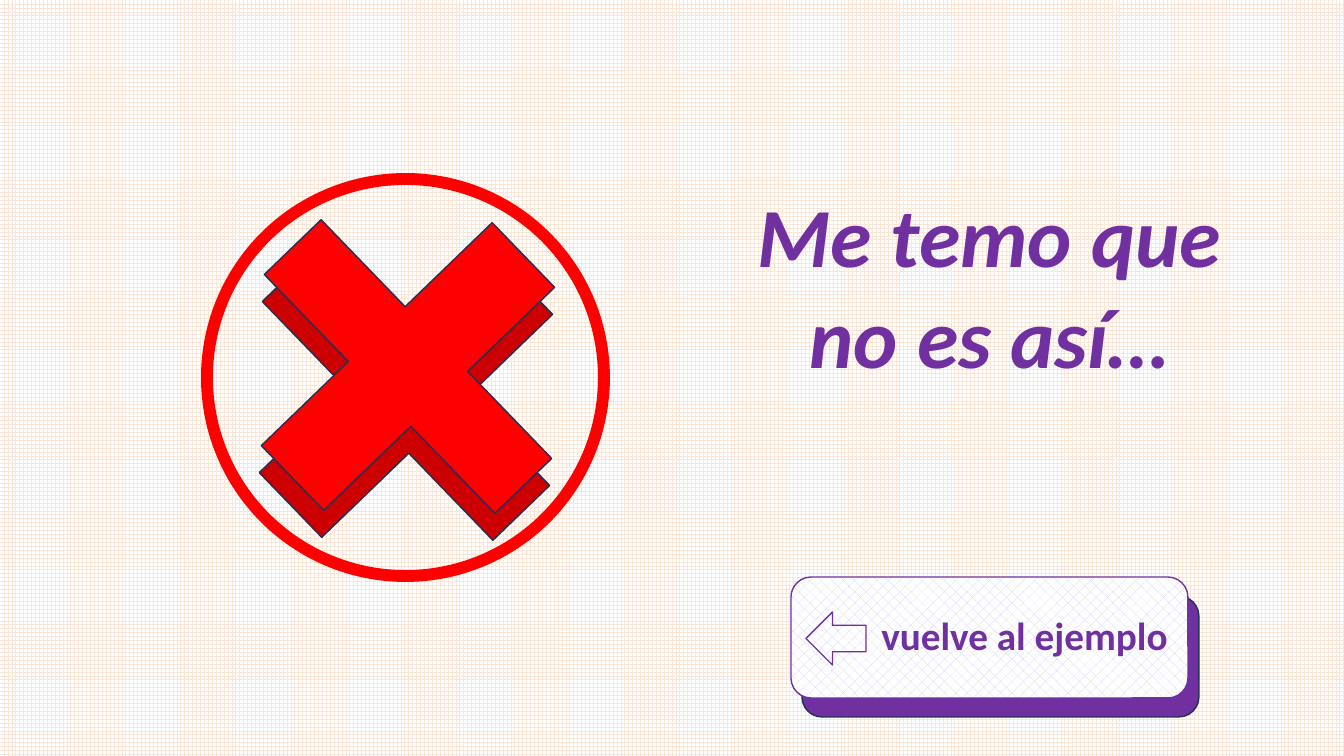
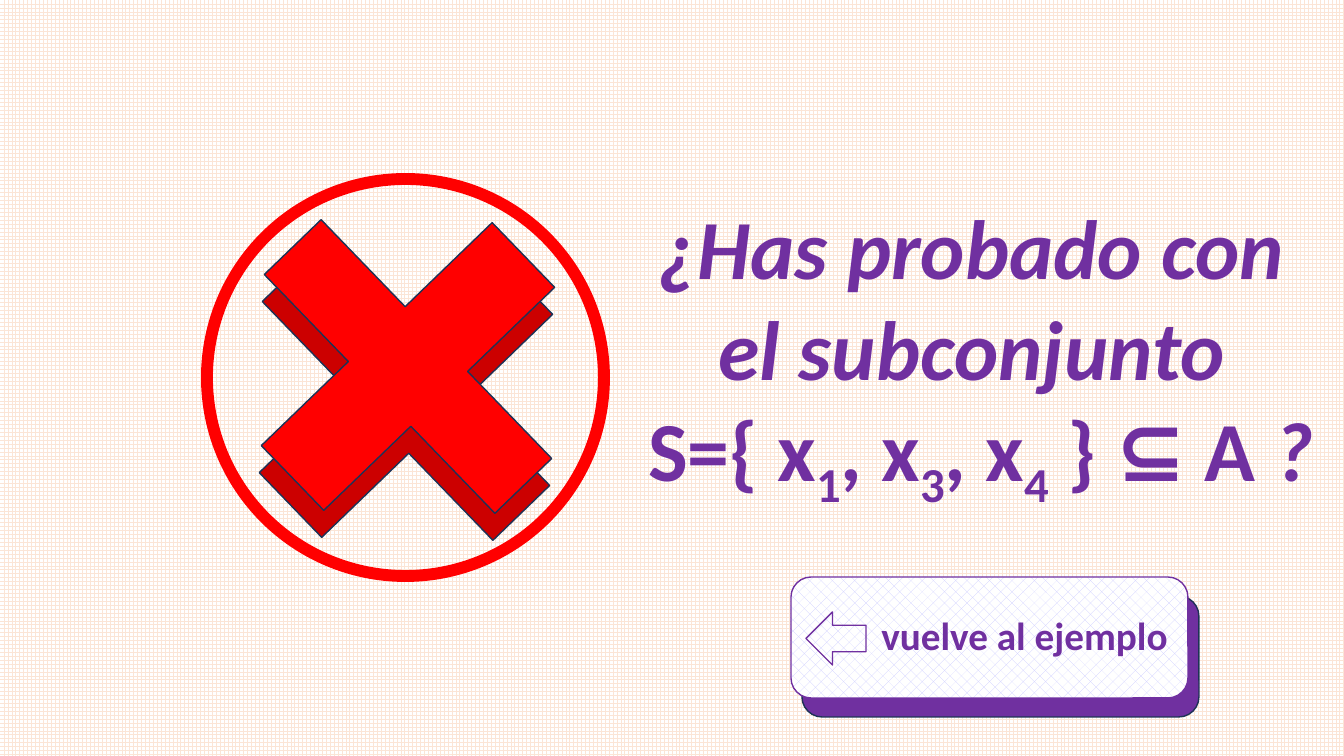
from lxml import etree
from pptx import Presentation
from pptx.dml.color import RGBColor
from pptx.enum.dml import MSO_PATTERN
from pptx.enum.shapes import MSO_SHAPE
from pptx.enum.text import MSO_ANCHOR, PP_ALIGN
from pptx.oxml.ns import qn
from pptx.util import Pt

SLIDE_WIDTH, SLIDE_HEIGHT = 1344, 756
EMU_PER_PX = 12192000 / SLIDE_WIDTH

PURPLE = RGBColor(0x70, 0x30, 0xA0)
RED = RGBColor(0xFF, 0x00, 0x00)
DARK_RED = RGBColor(0xCC, 0x00, 0x00)
NAVY = RGBColor(0x1E, 0x32, 0x56)
LAVENDER = RGBColor(0xCC, 0xCC, 0xFF)
PEACH = RGBColor(0xFB, 0xE5, 0xD6)
WHITE = RGBColor(0xFF, 0xFF, 0xFF)

FONT_NAME = "Calibri"
CENTER = PP_ALIGN.CENTER
MIDDLE = MSO_ANCHOR.MIDDLE
LARGE_GRID = MSO_PATTERN.LARGE_GRID
PERCENT_25 = MSO_PATTERN.PERCENT_25
CIRCLE = MSO_SHAPE.FLOWCHART_CONNECTOR
CROSS = MSO_SHAPE.CROSS
ROUNDED = MSO_SHAPE.ROUNDED_RECTANGLE
LEFT_ARROW = MSO_SHAPE.LEFT_ARROW

ITALIC, UPRIGHT, SUBSCRIPT = "italic", "upright", "subscript"
MARK_BOX = (207, 179, 397, 397)
BUTTON_BOX = (791, 577, 397, 121)
MESSAGES = [
    {
        "box": (679, 179, 620, 315),
        "wrap": True,
        "lines": [[(" Me temo que ", ITALIC)], [("no es así…", ITALIC)]],
    },
    {
        "box": (628, 191, 706, 315),
        "wrap": False,
        "lines": [
            [("¿Has probado con ", ITALIC)],
            [("el subconjunto ", ITALIC)],
            [
                ("S={ x", UPRIGHT), ("1", SUBSCRIPT),
                (", x", UPRIGHT), ("3", SUBSCRIPT),
                (", x", UPRIGHT), ("4", SUBSCRIPT),
                (" } ⊆ A ", UPRIGHT), ("?", ITALIC),
            ],
        ],
    },
]


def px(length):
    """Turn pixels into EMU."""
    return round(length * EMU_PER_PX)


def apply_pattern(fill, pattern, foreground, background):
    """Give a fill a two-colour pattern."""
    fill.patterned()
    fill.pattern = pattern
    fill.fore_color.rgb = foreground
    fill.back_color.rgb = background


def add_outlined_shape(slide, preset, box, line_color, line_width=1, fill_color=None):
    """Add a preset shape with a line and an optional solid fill."""
    shape = slide.shapes.add_shape(preset, *map(px, box))
    shape.shadow.inherit = False
    shape.line.color.rgb = line_color
    shape.line.width = Pt(line_width)
    if fill_color is None:
        shape.fill.background()
    else:
        shape.fill.solid()
        shape.fill.fore_color.rgb = fill_color
    return shape


def style_paragraph(paragraph, size):
    """Centre a paragraph and set its bold purple font."""
    paragraph.alignment = CENTER
    font = paragraph.font
    font.name = FONT_NAME
    font.size = Pt(size)
    font.bold = True
    font.color.rgb = PURPLE


def outline_run(run):
    """Draw a thin purple line around the letters of a run."""
    line = etree.Element(qn("a:ln"), w=str(Pt(1)))
    solid_fill = etree.SubElement(line, qn("a:solidFill"))
    etree.SubElement(solid_fill, qn("a:srgbClr"), val=str(PURPLE))
    run._r.get_or_add_rPr().insert(0, line)


def add_message(slide, box, wrap, lines):
    """Write the large message, one paragraph a line."""
    text_frame = slide.shapes.add_textbox(*map(px, box)).text_frame
    text_frame.word_wrap = wrap
    for index, pieces in enumerate(lines):
        paragraph = text_frame.add_paragraph() if index else text_frame.paragraphs[0]
        style_paragraph(paragraph, 60)
        for text, kind in pieces:
            run = paragraph.add_run()
            run.text = text
            if kind == ITALIC:
                run.font.italic = True
                outline_run(run)
            elif kind == SUBSCRIPT:
                run._r.get_or_add_rPr().set("baseline", "-25000")


def add_wrong_mark(slide, box):
    """Draw a ringed red cross with a darker cross behind it."""
    left, top, _, _ = box
    add_outlined_shape(slide, CIRCLE, box, RED, 8.5)
    for offset_x, offset_y, color in ((33, 54, DARK_RED), (35, 27, RED)):
        cross_box = (left + offset_x, top + offset_y, 332, 321)
        cross = add_outlined_shape(slide, CROSS, cross_box, NAVY, fill_color=color)
        cross.adjustments[0] = 0.377
        cross.rotation = 46


def add_back_button(slide, box):
    """Draw the button that leads back to the example."""
    left, top, width, height = box
    add_outlined_shape(slide, ROUNDED, (left + 11, top + 19, width, height), NAVY, fill_color=PURPLE)
    button = add_outlined_shape(slide, ROUNDED, box, PURPLE)
    apply_pattern(button.fill, PERCENT_25, LAVENDER, WHITE)
    text_frame = button.text_frame
    text_frame.word_wrap = True
    text_frame.vertical_anchor = MIDDLE
    text_frame.margin_left = px(80)
    text_frame.margin_right = px(10)
    paragraph = text_frame.paragraphs[0]
    paragraph.text = "vuelve al ejemplo"
    paragraph.line_spacing = 0.9
    paragraph.space_before = Pt(10)
    style_paragraph(paragraph, 28)
    add_outlined_shape(slide, LEFT_ARROW, (left + 15, top + 35, 60, 53), PURPLE)


def add_wrong_answer_slide(presentation, message):
    """Add a slide that tells the reader the answer is wrong."""
    slide = presentation.slides.add_slide(presentation.slide_layouts[6])
    apply_pattern(slide.background.fill, LARGE_GRID, PEACH, WHITE)
    add_message(slide, **message)
    add_wrong_mark(slide, MARK_BOX)
    add_back_button(slide, BUTTON_BOX)


def main():
    """Build and save the presentation."""
    presentation = Presentation()
    presentation.slide_width = px(SLIDE_WIDTH)
    presentation.slide_height = px(SLIDE_HEIGHT)
    for message in MESSAGES:
        add_wrong_answer_slide(presentation, message)
    presentation.save("out.pptx")


if __name__ == "__main__":
    main()
